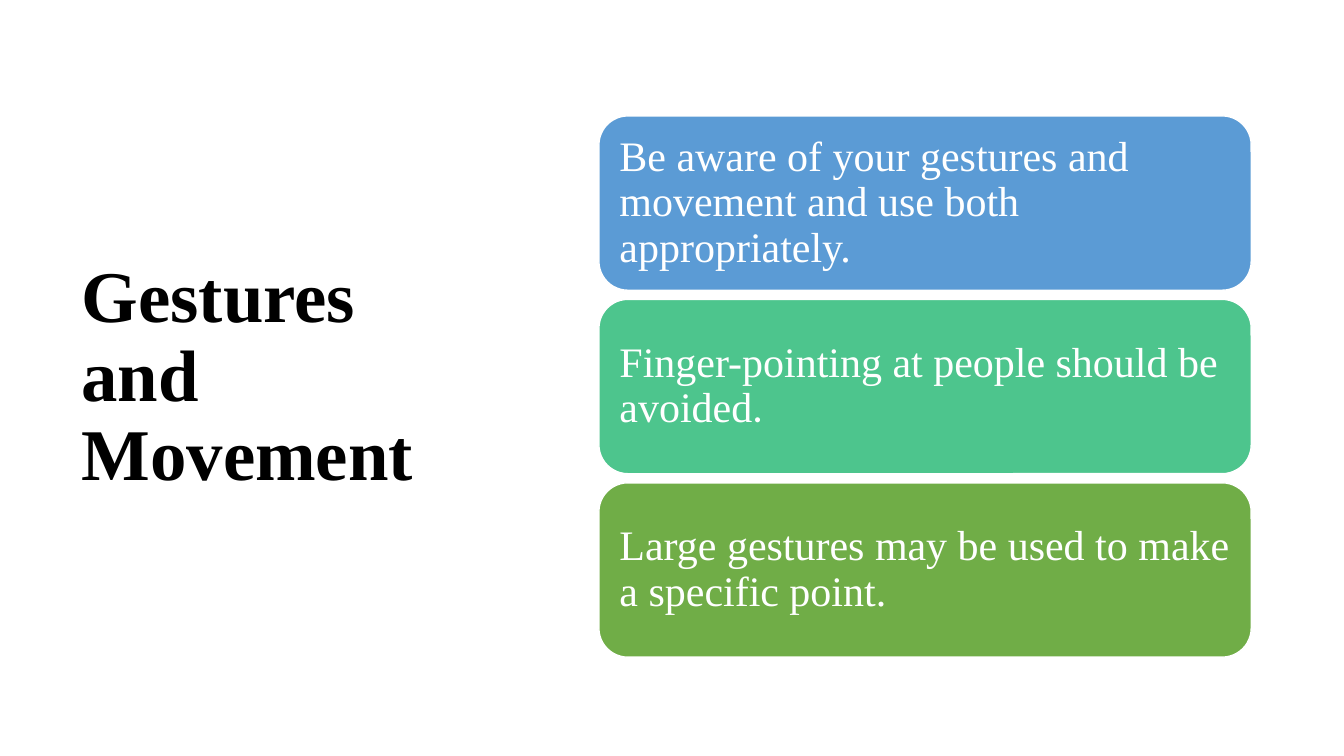
from pptx import Presentation
from pptx.dml.color import RGBColor
from pptx.enum.shapes import MSO_SHAPE
from pptx.enum.text import MSO_ANCHOR, MSO_AUTO_SIZE, PP_ALIGN
from pptx.util import Inches, Pt

ROUNDED = MSO_SHAPE.ROUNDED_RECTANGLE
MIDDLE = MSO_ANCHOR.MIDDLE
NO_FIT = MSO_AUTO_SIZE.NONE
LEFT = PP_ALIGN.LEFT

TITLE_ONLY = 5
SERIF, SANS = "Times New Roman", "Calibri"
COLOURS = {"black": "000000", "white": "FFFFFF", "blue": "5B9BD5",
           "teal": "4DC58D", "green": "70AD47"}

CARD_LEFT, CARD_TOP = 5.94, 1.15
CARD_WIDTH, CARD_HEIGHT = 6.47, 1.73
ROW_STEP = 1.82
CARD_PADDING = 0.12

ADVICE = [
    ("blue", [("Be aware of your gestures and movement and use both "
               "appropriately.", SERIF)]),
    ("teal", [("Finger-pointing at people should be avoided", SERIF),
              (".", SANS)]),
    ("green", [("Large gestures may be used to make a specific point.", SERIF)]),
]


def colour(name):
    return RGBColor.from_string(COLOURS[name])


def write(frame, spans, size, ink, bold=False):
    """Fill a text frame with one left-aligned paragraph of (text, font) spans."""
    frame.word_wrap = True
    frame.auto_size = NO_FIT
    frame.vertical_anchor = MIDDLE
    para = frame.paragraphs[0]
    para.alignment = LEFT
    para.line_spacing = 0.9
    for text, font in spans:
        span = para.add_run()
        span.text = text
        span.font.name = font
        span.font.size = Pt(size)
        span.font.bold = bold
        span.font.color.rgb = colour(ink)


def set_title(page, text):
    title = page.shapes.title
    title.left, title.top = Inches(0.71), Inches(1.2)
    title.width, title.height = Inches(4.15), Inches(5.1)
    write(title.text_frame, [(text, SERIF)], 52, "black", bold=True)


def add_card(page, row, fill, spans):
    card = page.shapes.add_shape(
        ROUNDED, Inches(CARD_LEFT), Inches(CARD_TOP + row * ROW_STEP),
        Inches(CARD_WIDTH), Inches(CARD_HEIGHT))
    card.shadow.inherit = False
    card.fill.solid()
    card.fill.fore_color.rgb = colour(fill)
    card.line.color.rgb = colour("white")
    card.line.width = Pt(1)
    frame = card.text_frame
    frame.margin_left = frame.margin_right = Inches(CARD_PADDING)
    frame.margin_top = frame.margin_bottom = Inches(CARD_PADDING)
    write(frame, spans, 30, "white")


def main():
    deck = Presentation()
    deck.slide_width, deck.slide_height = Inches(13.33), Inches(7.5)
    page = deck.slides.add_slide(deck.slide_layouts[TITLE_ONLY])
    set_title(page, "Gestures and Movement")
    for row, (fill, spans) in enumerate(ADVICE):
        add_card(page, row, fill, spans)
    deck.save("out.pptx")


if __name__ == "__main__":
    main()
